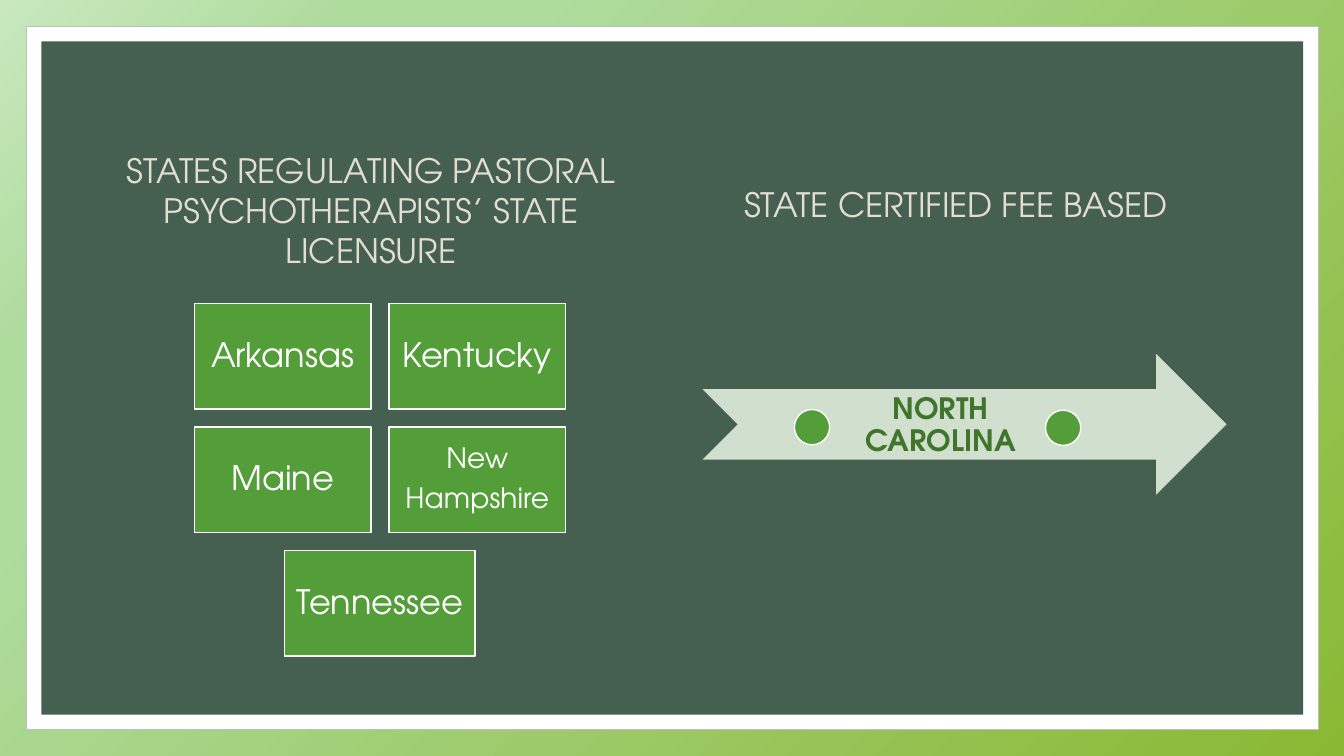
from lxml import etree
from pptx import Presentation
from pptx.dml.color import RGBColor
from pptx.enum.shapes import MSO_SHAPE as Preset
from pptx.enum.text import MSO_ANCHOR as Anchor, PP_ALIGN as Align
from pptx.oxml import parse_xml
from pptx.util import Pt

FONT = "TeX Gyre Adventor"
COLORS = {
    "white": "FFFFFF", "border": "BFBFBF", "panel": "455F51", "heading": "E3DED1",
    "green": "549E39", "arrow": "D1DFCE", "certified": "3F762B",
}
BACKDROP_STOPS = [(0, "8AB833"), (74, "AEDC9D"), (83, "AEDC9D"), (100, "C9E8BE")]
HEADINGS = [
    ("STATES REGULATING PASTORAL PSYCHOTHERAPISTS’ STATE LICENSURE", (77.8, 83.5, 374.4, 133.2)),
    ("STATE CERTIFIED FEE BASED", (495.4, 83.5, 374.4, 124.6)),
]
LICENSED_ROWS = [
    [("Arkansas", 24), ("Kentucky", 24)],
    [("Maine", 24), ("New\nHampshire", 20)],
    [("Tennessee", 24)],
]
CERTIFIED = "NORTH CAROLINA"
CERTIFIED_DOTS = [(567.4, 292.5), (746.8, 293)]
DOT_SIZE = 25.2

GRID_CENTER, GRID_TOP, ROW_PITCH = 271.4, 216.7, 88.2
BOX_HEIGHT, BOX_WIDTH, SINGLE_WIDTH, BOX_GAP = 75.6, 126, 136, 13


def paint_backdrop(page):
    stops = "".join(
        f'<a:gs pos="{position * 1000}"><a:srgbClr val="{color}"/></a:gs>'
        for position, color in BACKDROP_STOPS
    )
    page.element.cSld.insert(0, parse_xml(
        '<p:bg xmlns:p="http://schemas.openxmlformats.org/presentationml/2006/main" '
        'xmlns:a="http://schemas.openxmlformats.org/drawingml/2006/main"><p:bgPr>'
        f'<a:gradFill rotWithShape="1"><a:gsLst>{stops}</a:gsLst><a:path path="circle">'
        '<a:fillToRect l="100000" t="100000" r="0" b="0"/></a:path></a:gradFill>'
        '<a:effectLst/></p:bgPr></p:bg>'
    ))


def add_figure(page, preset, area, fill, line=None, line_width=1):
    figure = page.shapes.add_shape(preset, *map(Pt, area))
    figure.shadow.inherit = False
    figure.fill.solid()
    figure.fill.fore_color.rgb = RGBColor.from_string(COLORS[fill])
    if line:
        figure.line.color.rgb = RGBColor.from_string(COLORS[line])
        figure.line.width = Pt(line_width)
    else:
        figure.line.fill.background()
    return figure


def write(shape, text, size, color, insets, anchor=Anchor.MIDDLE, spacing=None, bold=False):
    frame = shape.text_frame
    frame.word_wrap = True
    frame.vertical_anchor = anchor
    frame.margin_left = frame.margin_right = Pt(insets[0])
    frame.margin_top = frame.margin_bottom = Pt(insets[1])
    frame.text = text
    for para in frame.paragraphs:
        para.alignment = Align.CENTER
        if spacing:
            para.line_spacing = spacing
            para.space_after = Pt(round(size * 0.35, 2))
        for span in para.runs:
            span.font.name = FONT
            span.font.size = Pt(size)
            span.font.bold = bold
            span.font.color.rgb = RGBColor.from_string(COLORS[color])


def add_certified_arrow(page):
    add_figure(page, Preset.NOTCHED_RIGHT_ARROW, (501.8, 252.7, 374.4, 100.8), "arrow")
    for left, top in CERTIFIED_DOTS:
        add_figure(page, Preset.OVAL, (left, top, DOT_SIZE, DOT_SIZE), "green", "white")
    label = page.shapes.add_textbox(*map(Pt, (589.7, 270, 164.2, 71.3)))
    write(label, CERTIFIED, 21, "certified", (11.5, 11.5), Anchor.TOP, 0.9, True)


def add_licensed_grid(page):
    for row, states in enumerate(LICENSED_ROWS):
        count = len(states)
        width = SINGLE_WIDTH if count == 1 else BOX_WIDTH
        left = GRID_CENTER - (count * width + (count - 1) * BOX_GAP) / 2
        for column, (state, size) in enumerate(states):
            area = (left + column * (width + BOX_GAP), GRID_TOP + row * ROW_PITCH, width, BOX_HEIGHT)
            box = add_figure(page, Preset.RECTANGLE, area, "green", "white")
            inset = size * 0.3
            write(box, state, size, "white", (inset, inset), spacing=0.9)


def main():
    deck = Presentation()
    deck.slide_width, deck.slide_height = Pt(960), Pt(540)
    page = deck.slides.add_slide(deck.slide_layouts[6])
    paint_backdrop(page)
    add_figure(page, Preset.RECTANGLE, (18.7, 18.7, 923, 502.6), "white", "border", 0.5)
    add_figure(page, Preset.RECTANGLE, (29.5, 29.5, 901.4, 481), "panel")
    for text, area in HEADINGS:
        heading = page.shapes.add_textbox(*map(Pt, area))
        write(heading, text, 24, "heading", (7.2, 3.6))
    add_certified_arrow(page)
    add_licensed_grid(page)
    deck.save("out.pptx")


if __name__ == "__main__":
    main()
